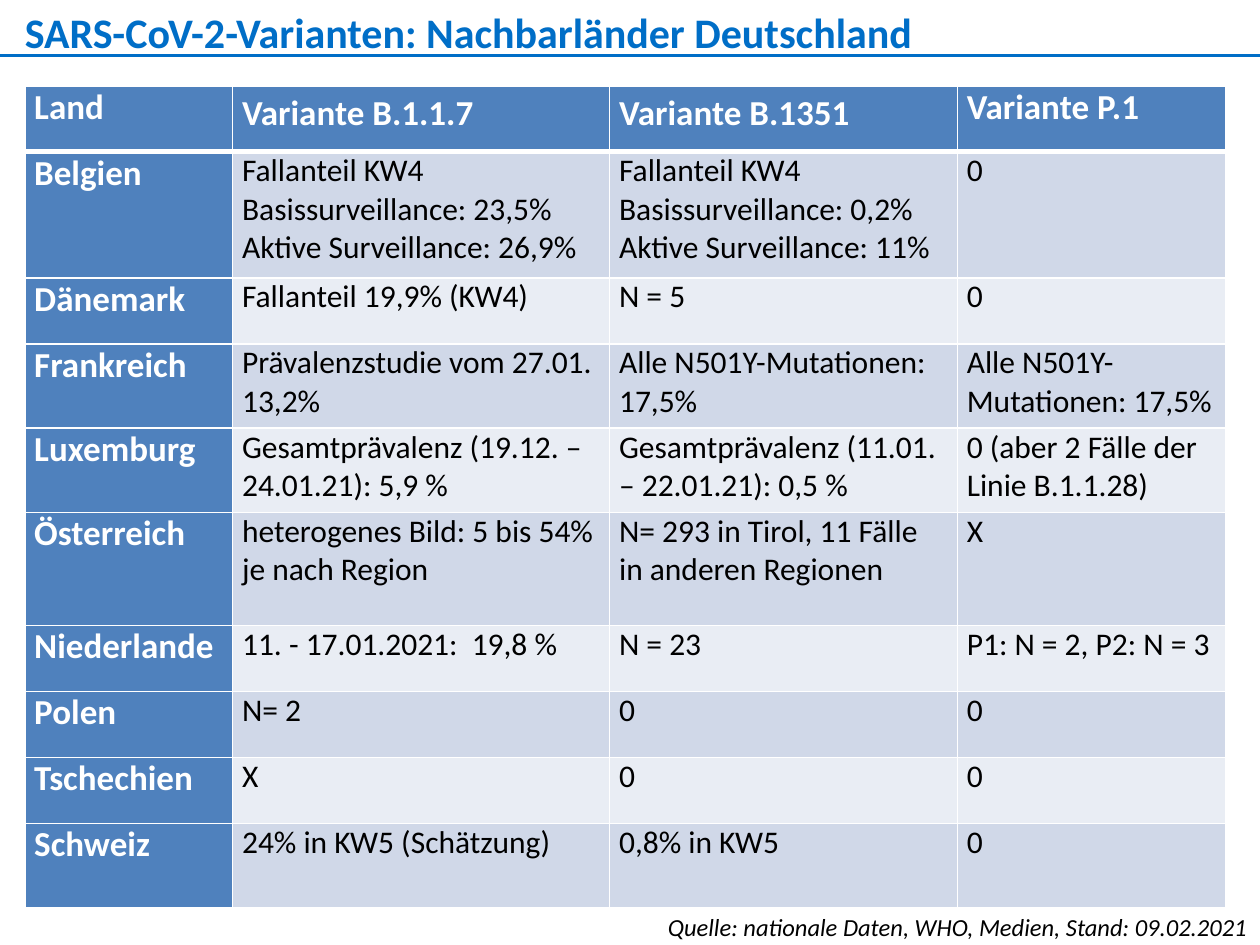
from typing import NamedTuple

from lxml.etree import SubElement
from pptx import Presentation
from pptx.dml.color import RGBColor
from pptx.enum.shapes import MSO_CONNECTOR
from pptx.enum.text import MSO_ANCHOR, MSO_AUTO_SIZE, PP_ALIGN
from pptx.oxml.ns import qn
from pptx.util import Cm, Pt

BLUE = RGBColor(0x00, 0x6E, 0xC7)
HEADER = RGBColor(0x4F, 0x81, 0xBD)
BAND_DARK = RGBColor(0xD0, 0xD8, 0xE8)
BAND_LIGHT = RGBColor(0xE9, 0xED, 0xF4)
WHITE = RGBColor(0xFF, 0xFF, 0xFF)
BLACK = RGBColor(0x00, 0x00, 0x00)

TITLE_FONT = {"name": "Calibri", "size": Pt(24), "bold": True, "italic": False}
SOURCE_FONT = {"name": "Calibri", "size": Pt(14), "bold": False, "italic": True}
HEADER_FONT = {"name": "Calibri", "size": Pt(20), "bold": True}
VALUE_FONT = {"name": "Calibri", "size": Pt(18), "bold": False}
CELL_MARGINS = {"margin_left": Cm(0.19), "margin_right": Cm(0.19),
                "margin_top": 0, "margin_bottom": 0}


class Row(NamedTuple):
    height: float
    cells: tuple[str, str, str, str]


COLUMN_WIDTHS = (4.19, 7.6, 7.01, 5.4)
LOW, MID, TALL, HIGH = 1.33, 1.7, 2.28, 2.54
ROWS = (
    Row(LOW, ("Land", "Variante B.1.1.7", "Variante B.1351", "Variante P.1")),
    Row(HIGH, ("Belgien",
               "Fallanteil KW4\nBasissurveillance: 23,5%\nAktive Surveillance: 26,9%",
               "Fallanteil KW4\nBasissurveillance: 0,2%\nAktive Surveillance: 11%",
               "0")),
    Row(LOW, ("Dänemark", "Fallanteil 19,9% (KW4)", "N = 5", "0")),
    Row(MID, ("Frankreich", "Prävalenzstudie vom 27.01.\n13,2%",
              "Alle N501Y-Mutationen: 17,5%", "Alle N501Y-Mutationen: 17,5%")),
    Row(MID, ("Luxemburg", "Gesamtprävalenz (19.12. – 24.01.21): 5,9 %",
              "Gesamtprävalenz (11.01. – 22.01.21): 0,5 %",
              "0 (aber 2 Fälle der Linie B.1.1.28)")),
    Row(TALL, ("Österreich", "heterogenes Bild: 5 bis 54% je nach Region",
               "N= 293 in Tirol, 11 Fälle in anderen Regionen", "X")),
    Row(LOW, ("Niederlande", "11. - 17.01.2021:  19,8 %", "N = 23",
              "P1: N = 2, P2: N = 3")),
    Row(LOW, ("Polen", "N= 2", "0", "0")),
    Row(LOW, ("Tschechien", "X", "0", "0")),
    Row(MID, ("Schweiz", "24% in KW5 (Schätzung)", "0,8% in KW5", "0")),
)


def set_attributes(target, values: dict) -> None:
    for name, value in values.items():
        setattr(target, name, value)


def format_text(tf, text: str, font: dict, color: RGBColor, **paragraph) -> None:
    tf.text = text
    for p in tf.paragraphs:
        set_attributes(p, paragraph)
        for r in p.runs:
            set_attributes(r.font, font)
            r.font.color.rgb = color


def add_border(cell, side: str, width: float) -> None:
    tc_pr = cell._tc.get_or_add_tcPr()
    ln = SubElement(tc_pr, qn(f"a:{side}"), w=str(Pt(width)))
    fill = SubElement(ln, qn("a:solidFill"))
    SubElement(fill, qn("a:srgbClr"), val=str(WHITE))


def format_cell(cell, text: str, row: int, col: int) -> None:
    is_header = row == 0 or col == 0
    set_attributes(cell, CELL_MARGINS)
    add_border(cell, "lnL", 1)
    add_border(cell, "lnR", 1)
    add_border(cell, "lnT", 3 if row == 1 else 1)
    add_border(cell, "lnB", 3 if row == 0 else 1)
    cell.fill.solid()
    band = BAND_DARK if row % 2 else BAND_LIGHT
    cell.fill.fore_color.rgb = HEADER if is_header else band
    spacing = {"line_spacing": 1.15} if row == 0 and col in (1, 2) else {}
    format_text(cell.text_frame, text, HEADER_FONT if is_header else VALUE_FONT,
                WHITE if is_header else BLACK, **spacing)


def add_variant_table(s) -> None:
    table = s.shapes.add_table(
        len(ROWS), len(COLUMN_WIDTHS), Cm(0.5), Cm(1.73),
        Cm(sum(COLUMN_WIDTHS)), Cm(sum(row.height for row in ROWS))).table
    for column, width in zip(table.columns, COLUMN_WIDTHS):
        column.width = Cm(width)
    for i, row in enumerate(ROWS):
        table.rows[i].height = Cm(row.height)
        for j, text in enumerate(row.cells):
            format_cell(table.cell(i, j), text, i, j)


def add_title(s) -> None:
    title = s.shapes.title
    set_attributes(title, {"left": Cm(0.5), "top": Cm(0.13),
                           "width": Cm(24.46), "height": Cm(1.02)})
    tf = title.text_frame
    set_attributes(tf, {"margin_left": 0, "margin_right": 0, "margin_top": 0,
                        "margin_bottom": 0, "word_wrap": True,
                        "vertical_anchor": MSO_ANCHOR.TOP,
                        "auto_size": MSO_AUTO_SIZE.SHAPE_TO_FIT_TEXT})
    format_text(tf, "SARS-CoV-2-Varianten: Nachbarländer Deutschland",
                TITLE_FONT, BLUE, alignment=PP_ALIGN.LEFT)


def add_title_rule(s, width: int) -> None:
    rule = s.shapes.add_connector(MSO_CONNECTOR.STRAIGHT, 0, Cm(1.12), width, Cm(1.12))
    rule.line.color.rgb = BLUE
    rule.line.width = Pt(1.5)
    SubElement(rule._element.spPr, qn("a:effectLst"))


def add_source_note(s) -> None:
    sp = s.shapes.add_textbox(Cm(12.5), Cm(18.26), Cm(12.9), Cm(0.86))
    tf = sp.text_frame
    set_attributes(tf, {"word_wrap": True,
                        "auto_size": MSO_AUTO_SIZE.SHAPE_TO_FIT_TEXT})
    format_text(tf, "Quelle: nationale Daten, WHO, Medien, Stand: 09.02.2021",
                SOURCE_FONT, BLACK, alignment=PP_ALIGN.RIGHT)


def main() -> None:
    prs = Presentation()
    prs.slide_width, prs.slide_height = Cm(25.4), Cm(19.05)
    s = prs.slides.add_slide(prs.slide_layouts[5])
    add_title(s)
    add_title_rule(s, prs.slide_width)
    add_source_note(s)
    add_variant_table(s)
    prs.save("out.pptx")


if __name__ == "__main__":
    main()
